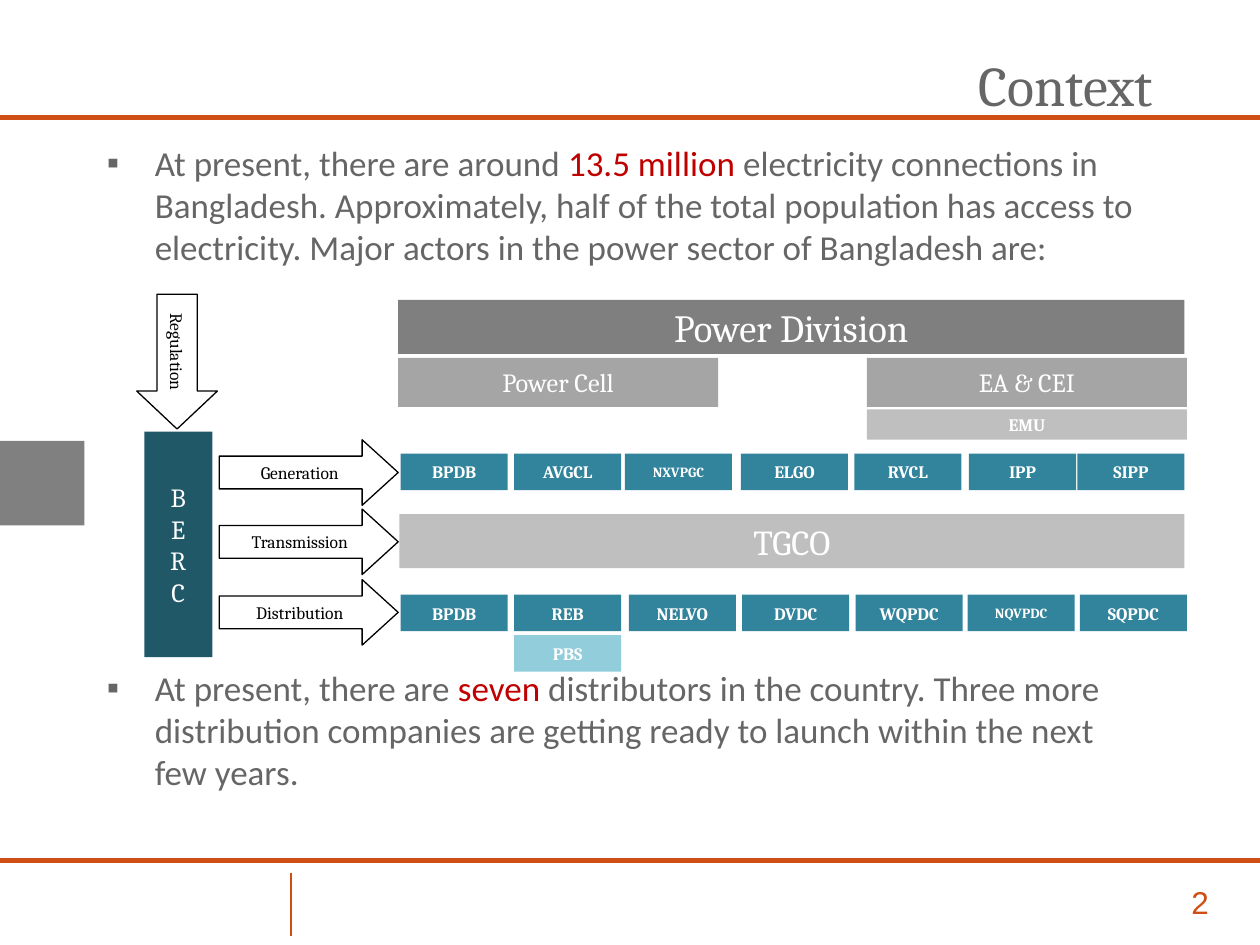
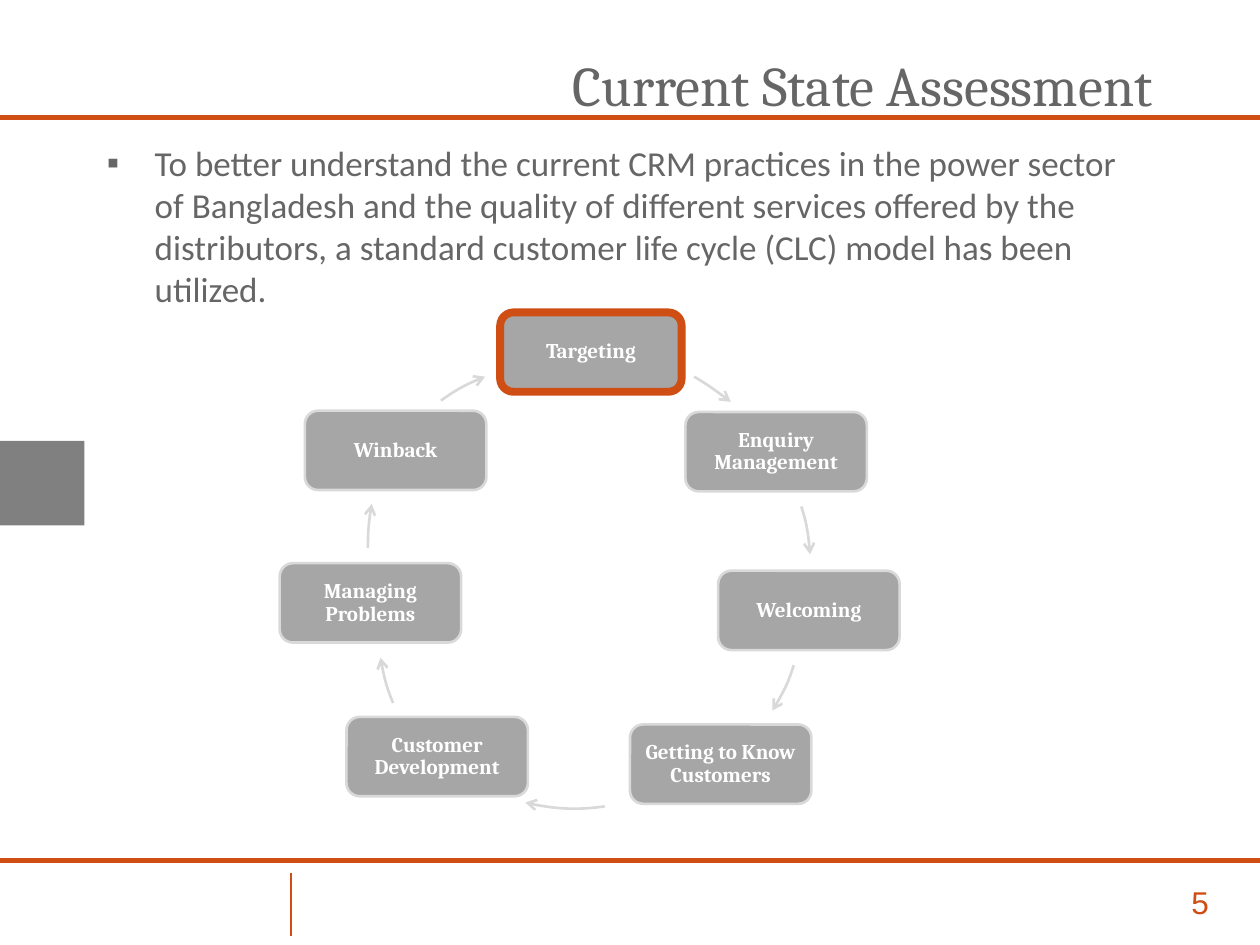
from lxml.etree import SubElement
from pptx import Presentation
from pptx.dml.color import RGBColor
from pptx.enum.shapes import MSO_CONNECTOR, MSO_SHAPE
from pptx.enum.text import MSO_ANCHOR, PP_ALIGN
from pptx.oxml.ns import qn
from pptx.util import Inches, Pt

ORANGE, GREY, RED = "CE4E14", "666666", "C00000"
WHITE, BLACK = "FFFFFF", "000000"
TEAL, DARK_TEAL, LIGHT_TEAL = "31849B", "205867", "92CDDC"
DARK_BAND, MIDDLE_BAND, LIGHT_BAND = "7F7F7F", "A5A5A5", "BFBFBF"
NODE_GREY, ARC_GREY = "A6A6A6", "D9D9D9"

TITLE = dict(size=Pt(32), name="Cambria", color=GREY, align=PP_ALIGN.RIGHT)
BODY = dict(size=Pt(20), name="Calibri", color=GREY, align=PP_ALIGN.LEFT,
            anchor=MSO_ANCHOR.TOP, bullet=True)
NUMBER = dict(size=Pt(18), name="Arial", color=ORANGE, anchor=MSO_ANCHOR.TOP)
LABEL = dict(size=Pt(10), name="Cambria", color=WHITE, bold=True)
ARROW_LABEL = LABEL | dict(color=BLACK, bold=False)
NODE = LABEL | dict(size=Pt(12), line_spacing=0.9, inset=0.05)


def paint(target, hex_string):
    """Give a fill or a font a solid colour."""
    if hasattr(target, "solid"):
        target.solid()
        target.fore_color.rgb = RGBColor.from_string(hex_string)
    else:
        target.color.rgb = RGBColor.from_string(hex_string)


def add_box(slide, place, text, style, preset=None, fill=None, line=None):
    """Add a text box or a preset shape; text between bars is highlighted."""
    lengths = [Inches(value) for value in place]
    if preset is None:
        shape = slide.shapes.add_textbox(*lengths)
    else:
        shape = slide.shapes.add_shape(preset, *lengths)
        shape.shadow.inherit = False
        paint(shape.fill, fill)
        if line:
            paint(shape.line.fill, line[0])
            shape.line.width = Pt(line[1])
        else:
            shape.line.fill.background()
    frame = shape.text_frame
    frame.word_wrap = True
    frame.vertical_anchor = style.get("anchor", MSO_ANCHOR.MIDDLE)
    if "inset" in style:
        for side in ("left", "right", "top", "bottom"):
            setattr(frame, f"margin_{side}", Inches(style["inset"]))
    for index, paragraph_text in enumerate(text.split("\n")):
        paragraph = frame.add_paragraph() if index else frame.paragraphs[0]
        paragraph.alignment = style.get("align", PP_ALIGN.CENTER)
        paragraph.line_spacing = style.get("line_spacing")
        if style.get("bullet"):
            properties = paragraph._p.get_or_add_pPr()
            properties.set("marL", str(Inches(0.38)))
            properties.set("indent", str(-Inches(0.38)))
            SubElement(properties, qn("a:buFont"), typeface="Arial")
            SubElement(properties, qn("a:buChar"), char="▪")
        for part, run_text in enumerate(paragraph_text.split("|")):
            run = paragraph.add_run()
            run.text = run_text
            for key in ("size", "name", "bold"):
                if key in style:
                    setattr(run.font, key, style[key])
            paint(run.font, RED if part % 2 else style["color"])
    return shape


presentation = Presentation()
presentation.slide_width, presentation.slide_height = Inches(10), Inches(7.5)

# Shared frame: side block, rules, title, page number
slides = []
for title, number in (("Context", "2"), ("Current State Assessment", "5")):
    slide = presentation.slides.add_slide(presentation.slide_layouts[6])
    slides.append(slide)
    side_block = slide.shapes.add_shape(
        MSO_SHAPE.RECTANGLE, 0, Inches(3.5), Inches(0.67), Inches(0.67))
    side_block.shadow.inherit = False
    paint(side_block.fill, "808080")
    side_block.line.fill.background()
    for *ends, width in ((0, 6.83, 10, 6.83, 3), (0, 0.93, 10, 0.93, 3),
                         (2.31, 7.43, 2.31, 6.93, 0.75)):
        rule = slide.shapes.add_connector(
            MSO_CONNECTOR.STRAIGHT, *[Inches(value) for value in ends])
        paint(rule.line.fill, ORANGE)
        rule.line.width = Pt(width)
        SubElement(rule._element.spPr, qn("a:effectLst"))
    add_box(slide, (9.25, 6.96, 0.55, 0.4), number, NUMBER)
    add_box(slide, (0.83, 0.33, 8.42, 0.67), title, TITLE)
context, assessment = slides

# Context: statements above and below the diagram
add_box(context, (0.75, 1.07, 8.42, 1.2),
        "At present, there are around |13.5 million |electricity connections in "
        "Bangladesh. Approximately, half of the total population has access to "
        "electricity. Major actors in the power sector of Bangladesh are:", BODY)
add_box(context, (0.75, 5.24, 8.42, 1.2),
        "At present, there are |seven| distributors in the country. Three more "
        "distribution companies are getting ready to launch within the next "
        "few years.", BODY)

# Context: bands of the authorities
for text, place, fill, size, bold in (
        ("Power Division", (3.16, 2.38, 6.24, 0.43), DARK_BAND, 22, False),
        ("Power Cell", (3.16, 2.84, 2.54, 0.39), MIDDLE_BAND, 15, False),
        ("EA & CEI", (6.88, 2.84, 2.54, 0.39), MIDDLE_BAND, 15, False),
        ("EMU", (6.88, 3.25, 2.54, 0.24), LIGHT_BAND, 10, True),
        ("TGCO", (3.17, 4.08, 6.23, 0.43), LIGHT_BAND, 20, False),
        ("PBS", (4.08, 5.04, 0.85, 0.29), LIGHT_TEAL, 10, True)):
    add_box(context, place, text, LABEL | dict(size=Pt(size), bold=bold),
            MSO_SHAPE.RECTANGLE, fill)

# Context: regulator, a turned bar with upright letters
regulator = add_box(context, (0.52, 4.05, 1.79, 0.54), "B\nE\nR\nC",
                    LABEL | dict(size=Pt(15), bold=False),
                    MSO_SHAPE.RECTANGLE, DARK_TEAL)
regulator.rotation = 90
regulator.text_frame._txBody.bodyPr.set("vert", "vert270")

# Context: arrows for regulation and the three functions
for text, place, head, rotation in (
        ("Generation", (1.74, 3.49, 1.42, 0.52), 0.55, 0),
        ("Transmission", (1.74, 4.04, 1.42, 0.52), 0.55, 0),
        ("Distribution", (1.74, 4.6, 1.42, 0.52), 0.55, 0),
        ("Regulation", (0.87, 2.55, 1.07, 0.64), 0.47, 90)):
    arrow = add_box(context, place, text, ARROW_LABEL,
                    MSO_SHAPE.RIGHT_ARROW, WHITE, (BLACK, 0.75))
    arrow.adjustments[1] = head
    arrow.rotation = rotation

# Context: rows of generators and distributors
for top, row in (
        (3.6, (("BPDB", 3.18), ("AVGCL", 4.08), ("NXVPGC", 4.96), ("ELGO", 5.88),
               ("RVCL", 6.78), ("IPP", 7.69), ("SIPP", 8.55))),
        (4.72, (("BPDB", 3.18), ("REB", 4.08), ("NELVO", 4.99), ("DVDC", 5.89),
                ("WQPDC", 6.79), ("NQVPDC", 7.68), ("SQPDC", 8.57)))):
    for name, left in row:
        size = Pt(8 if len(name) > 5 else 10)
        add_box(context, (left, top, 0.85, 0.29), name,
                LABEL | dict(size=size), MSO_SHAPE.RECTANGLE, TEAL)

# Assessment: statement
add_box(assessment, (0.75, 1.07, 8.5, 1.76),
        "To better understand the current CRM practices in the power sector of "
        "Bangladesh and the quality of different services offered by the "
        "distributors, a standard customer life cycle (CLC) model has been "
        "utilized.", BODY)

# Assessment: life cycle stages, the current one outlined in orange
for stage, left, top in (
        ("Targeting", 3.97, 2.48), ("Enquiry Management", 5.44, 3.27),
        ("Welcoming", 5.7, 4.53), ("Getting to Know Customers", 5, 5.75),
        ("Customer Development", 2.75, 5.69), ("Managing Problems", 2.22, 4.47),
        ("Winback", 2.42, 3.26)):
    outline = (ORANGE, 4.5) if stage == "Targeting" else (ARC_GREY, 1.5)
    add_box(assessment, (left, top, 1.44, 0.63), stage, NODE,
            MSO_SHAPE.ROUNDED_RECTANGLE, NODE_GREY, outline)

# Assessment: curved arrows, each the corner of its circle's square,
# then start, two control points and end
CIRCLE = Inches(3.57)
for corner, *curve in (
        ((2.86, 2.78), (5.51, 2.99), (5.61, 3.05), (5.71, 3.12), (5.8, 3.19)),
        ((2.86, 2.73), (6.36, 4.02), (6.4, 4.14), (6.42, 4.27), (6.43, 4.4)),
        ((2.82, 2.92), (6.3, 5.28), (6.26, 5.41), (6.2, 5.53), (6.13, 5.64)),
        ((2.76, 2.84), (4.8, 6.4), (4.59, 6.43), (4.38, 6.42), (4.17, 6.37)),
        ((2.99, 3.12), (3.12, 5.58), (3.07, 5.46), (3.04, 5.34), (3.02, 5.22)),
        ((2.92, 2.54), (2.92, 4.35), (2.92, 4.23), (2.93, 4.11), (2.95, 4)),
        ((2.74, 2.85), (3.5, 3.18), (3.61, 3.1), (3.72, 3.04), (3.85, 2.99))):
    left, top = [Inches(value) for value in corner]
    builder = assessment.shapes.build_freeform(left, top)
    builder.add_line_segments([(left + CIRCLE, top + CIRCLE)], close=False)
    arc = builder.convert_to_shape()
    outline = arc._element.spPr.find(".//" + qn("a:path"))
    for segment in list(outline):
        outline.remove(segment)
    for tag, points in (("a:moveTo", curve[:1]), ("a:cubicBezTo", curve[1:])):
        segment = SubElement(outline, qn(tag))
        for x, y in points:
            SubElement(segment, qn("a:pt"),
                       x=str(Inches(x) - left), y=str(Inches(y) - top))
    arc.shadow.inherit = False
    arc.fill.background()
    paint(arc.line.fill, ARC_GREY)
    arc.line.width = Pt(1.5)
    SubElement(arc.line._get_or_add_ln(), qn("a:tailEnd"), type="arrow")

presentation.save("out.pptx")
